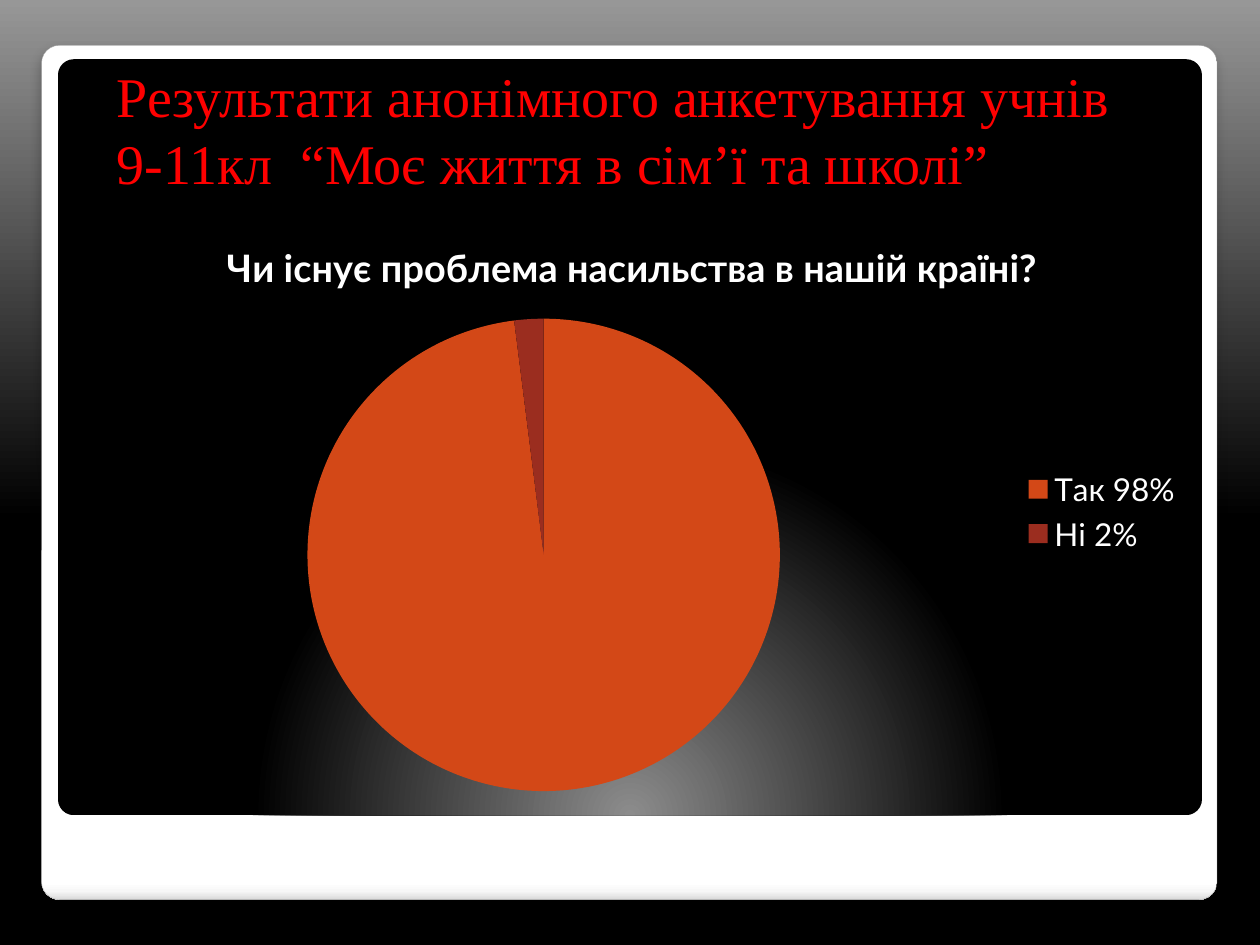
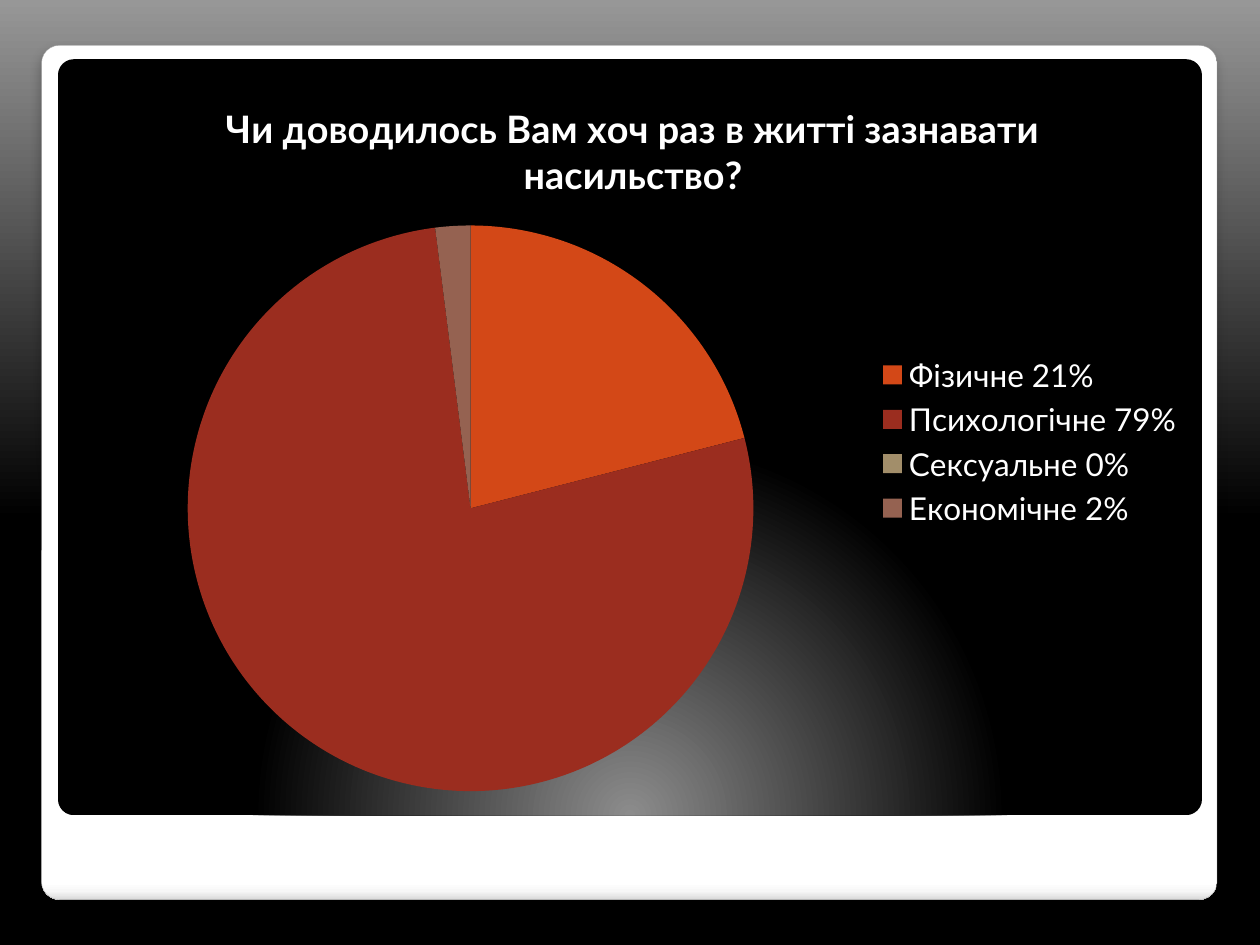
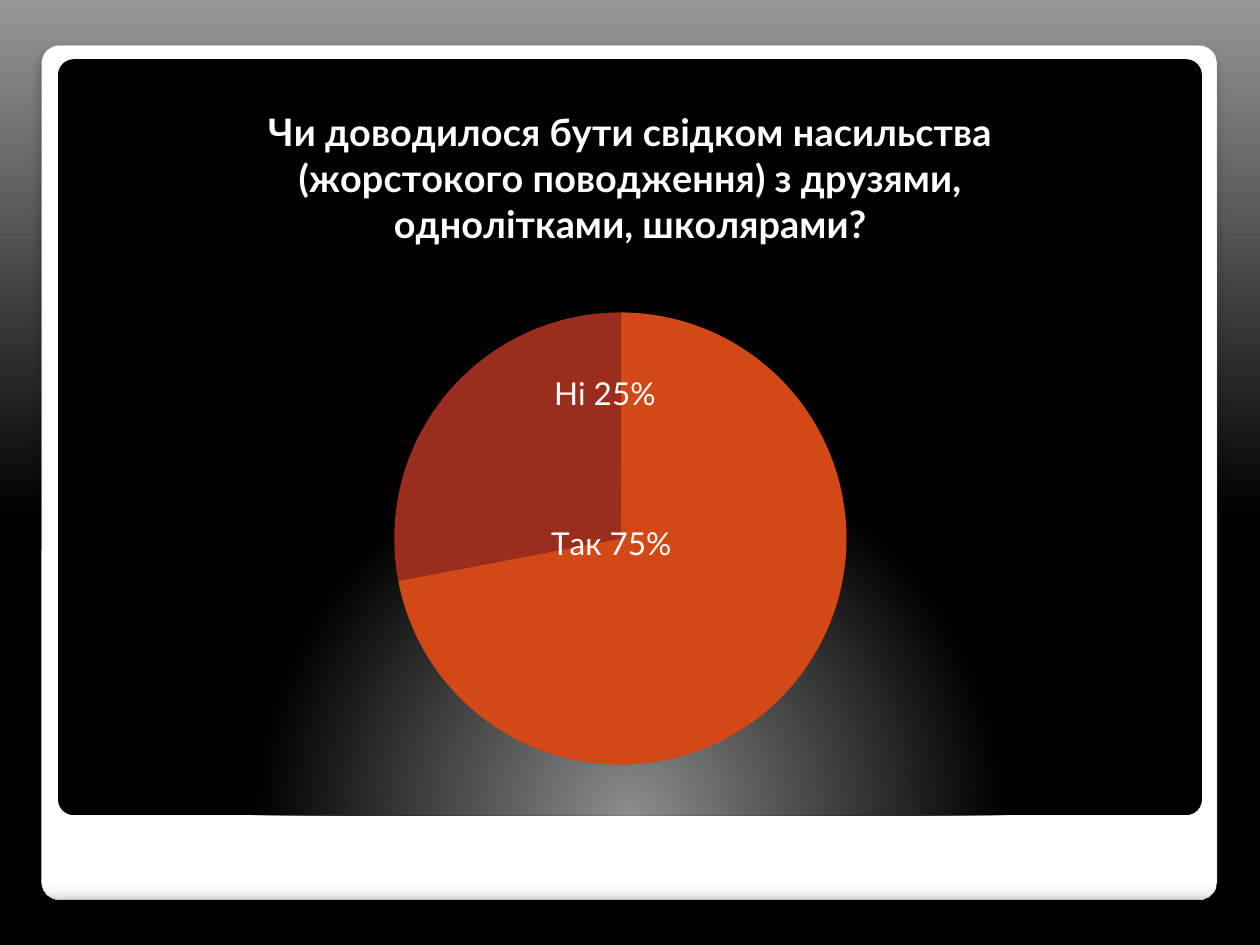
from dataclasses import dataclass

from pptx import Presentation
from pptx.chart.data import CategoryChartData
from pptx.dml.color import RGBColor
from pptx.enum.chart import XL_CHART_TYPE, XL_LEGEND_POSITION
from pptx.enum.shapes import MSO_SHAPE
from pptx.oxml import parse_xml
from pptx.oxml.ns import nsdecls, qn
from pptx.util import Inches, Pt


@dataclass(frozen=True)
class Theme:
    heading_color: str = "FF0000"
    text_color: str = "FFFFFF"
    frame_line: str = "A4A4A4"
    slices: tuple = ("D34817", "9B2D1F", "A28E6A", "956251")
    background: tuple = ((0, "000000"), (45, "000000"), (100, "979797"))
    frame: tuple = ((0, "FFFFFF"), (98, "FFFFFF"), (99, "F7F7F7"), (100, "DADADA"))
    panel: tuple = ((0, "8C8C8C"), (55, "000000"), (100, "000000"))
    heading_font: str = "Times New Roman"
    chart_font: str = "Lato"
    heading_size: float = 32
    question_size: float = 21.6
    chart_size: float = 18


LINEAR = '<a:lin ang="{}" scaled="0"/>'
GLOW = '<a:path path="circle"><a:fillToRect l="50000" t="175000" r="50000" b="-75000"/></a:path>'


def set_gradient(fill, properties, stops, direction):
    """Give a fill any number of stops, as (percent, color) pairs."""
    fill.gradient()
    stop_xml = "".join(
        f'<a:gs pos="{percent * 1000}"><a:srgbClr val="{color}"/></a:gs>'
        for percent, color in stops)
    gradient = parse_xml(f'<a:gradFill {nsdecls("a")} rotWithShape="1">'
                         f'<a:gsLst>{stop_xml}</a:gsLst>{direction}</a:gradFill>')
    properties.replace(properties.find(qn("a:gradFill")), gradient)


def manual_layout(inner=False, **fractions):
    """Place a chart part by fractions of the chart's size."""
    parts = ""
    if inner:
        parts = '<c:layoutTarget val="inner"/><c:xMode val="edge"/><c:yMode val="edge"/>'
    parts += "".join(f'<c:{name} val="{value:.4f}"/>' for name, value in fractions.items())
    return parse_xml(f'<c:layout {nsdecls("c")}><c:manualLayout>{parts}'
                     f'</c:manualLayout></c:layout>')


class SurveyDeck:
    def __init__(self, theme):
        self.theme = theme
        self.presentation = Presentation()
        self.presentation.slide_width = Inches(10)
        self.presentation.slide_height = Inches(7.5)
        self.slide = None
        master = self.presentation.slide_master
        fill = master.background.fill
        set_gradient(fill, master.element.find(".//" + qn("p:bgPr")),
                     theme.background, LINEAR.format(270 * 60000))

    def add_slide(self):
        self.slide = self.presentation.slides.add_slide(self.presentation.slide_layouts[6])
        # White frame with a soft shadow
        frame = self.add_panel(0.33, 0.36, 9.33, 6.78, self.theme.frame,
                               LINEAR.format(90 * 60000))
        frame.line.color.rgb = RGBColor.from_string(self.theme.frame_line)
        frame.line.width = Pt(0.16)
        frame.element.spPr.find(qn("a:effectLst")).append(parse_xml(
            f'<a:outerShdw {nsdecls("a")} blurRad="{Pt(6)}" dist="{Pt(4)}" dir="5400000" '
            'algn="t" rotWithShape="0"><a:srgbClr val="000000"><a:alpha val="25000"/>'
            '</a:srgbClr></a:outerShdw>'))
        # Dark panel with a glow at the bottom
        self.add_panel(0.46, 0.47, 9.08, 6, self.theme.panel, GLOW)

    def add_panel(self, left, top, width, height, stops, direction):
        shape = self.slide.shapes.add_shape(
            MSO_SHAPE.ROUNDED_RECTANGLE,
            Inches(left), Inches(top), Inches(width), Inches(height))
        shape.adjustments[0] = 0.021
        set_gradient(shape.fill, shape.element.spPr, stops, direction)
        shape.line.fill.background()
        shape.shadow.inherit = False
        return shape

    def format_font(self, font, name, size, color, bold=False):
        font.name = name
        font.size = Pt(size)
        font.bold = bold
        font.color.rgb = RGBColor.from_string(color)

    def add_heading(self, text):
        box = self.slide.shapes.add_textbox(Inches(0.83), Inches(0.44), Inches(8.5), Inches(1.18))
        box.text_frame.word_wrap = True
        box.text_frame.text = text
        self.format_font(box.text_frame.paragraphs[0].runs[0].font, self.theme.heading_font,
                         self.theme.heading_size, self.theme.heading_color)

    def add_pie(self, question, answers, area, pie, label_offsets=None):
        """Draw a pie; area is the chart's box, pie is left, top and diameter on the slide."""
        theme = self.theme
        data = CategoryChartData()
        data.categories = list(answers)
        data.add_series(question, list(answers.values()))
        chart = self.slide.shapes.add_chart(
            XL_CHART_TYPE.PIE, *(Inches(length) for length in area), data).chart
        self.format_font(chart.font, theme.chart_font, theme.chart_size, theme.text_color)

        # Question
        chart.has_title = True
        title = chart.chart_title
        title.include_in_layout = False
        title.text_frame.text = question
        self.format_font(title.text_frame.paragraphs[0].runs[0].font, theme.chart_font,
                         theme.question_size, theme.text_color, bold=True)

        # Slices
        plot = chart.plots[0]
        plot.vary_by_categories = True
        for index, color in zip(range(len(answers)), theme.slices):
            fill = plot.series[0].points[index].format.fill
            fill.solid()
            fill.fore_color.rgb = RGBColor.from_string(color)
        self.place_pie(chart, area, pie)

        # Legend, or labels on the slices
        chart.has_legend = label_offsets is None
        if chart.has_legend:
            chart.legend.position = XL_LEGEND_POSITION.RIGHT
            chart.legend.include_in_layout = False
        else:
            self.add_slice_labels(chart, answers, label_offsets)

    def place_pie(self, chart, area, pie):
        left, top, width, height = area
        pie_left, pie_top, diameter = pie
        plot_area = chart.element.find(".//" + qn("c:plotArea"))
        for layout in plot_area.findall(qn("c:layout")):
            plot_area.remove(layout)
        plot_area.insert(0, manual_layout(
            inner=True, x=(pie_left - left) / width, y=(pie_top - top) / height,
            w=diameter / width, h=diameter / height))

    def add_slice_labels(self, chart, answers, offsets):
        series = chart.plots[0].series[0]
        labels = series.data_labels
        labels.show_value = False
        labels.show_category_name = True
        labels.show_percentage = True
        for index, answer in enumerate(answers):
            text_frame = series.points[index].data_label.text_frame
            text_frame.text = answer
            self.format_font(text_frame.paragraphs[0].runs[0].font, self.theme.chart_font,
                             self.theme.chart_size, self.theme.text_color)
        for label, (x, y) in zip(chart.element.iter(qn("c:dLbl")), offsets):
            label.insert(1, manual_layout(x=x, y=y))
        for leader in chart.element.iter(qn("c:showLeaderLines")):
            leader.set("val", "0")


def main():
    deck = SurveyDeck(Theme())

    # Is there a problem
    deck.add_slide()
    deck.add_pie("Чи існує проблема насильства в нашій країні?",
                 {"Так 98%": 98, "Ні 2%": 2},
                 area=(0.55, 1.7, 8.94, 4.72), pie=(2.44, 2.53, 3.75))
    deck.add_heading("Результати анонімного анкетування учнів 9-11кл  “Моє життя в сім’ї та школі”")

    # Own experience
    deck.add_slide()
    deck.add_pie("Чи доводилось Вам хоч раз в житті зазнавати насильство?",
                 {"Фізичне 21%": 21, "Психологічне 79%": 77,
                  "Сексуальне 0%": 0, "Економічне 2%": 2},
                 area=(0.55, 0.58, 8.95, 5.85), pie=(1.49, 1.79, 4.49))

    # Witnesses
    deck.add_slide()
    deck.add_pie("Чи доводилося бути свідком насильства (жорстокого поводження) "
                 "з друзями, однолітками, школярами?",
                 {"Так 75%": 72, "Ні 25%": 28},
                 area=(0.51, 0.6, 8.99, 5.91), pie=(3.13, 2.48, 3.59),
                 label_offsets=((-0.22, -0.22), (0.19, 0.03)))

    deck.presentation.save("out.pptx")


if __name__ == "__main__":
    main()
